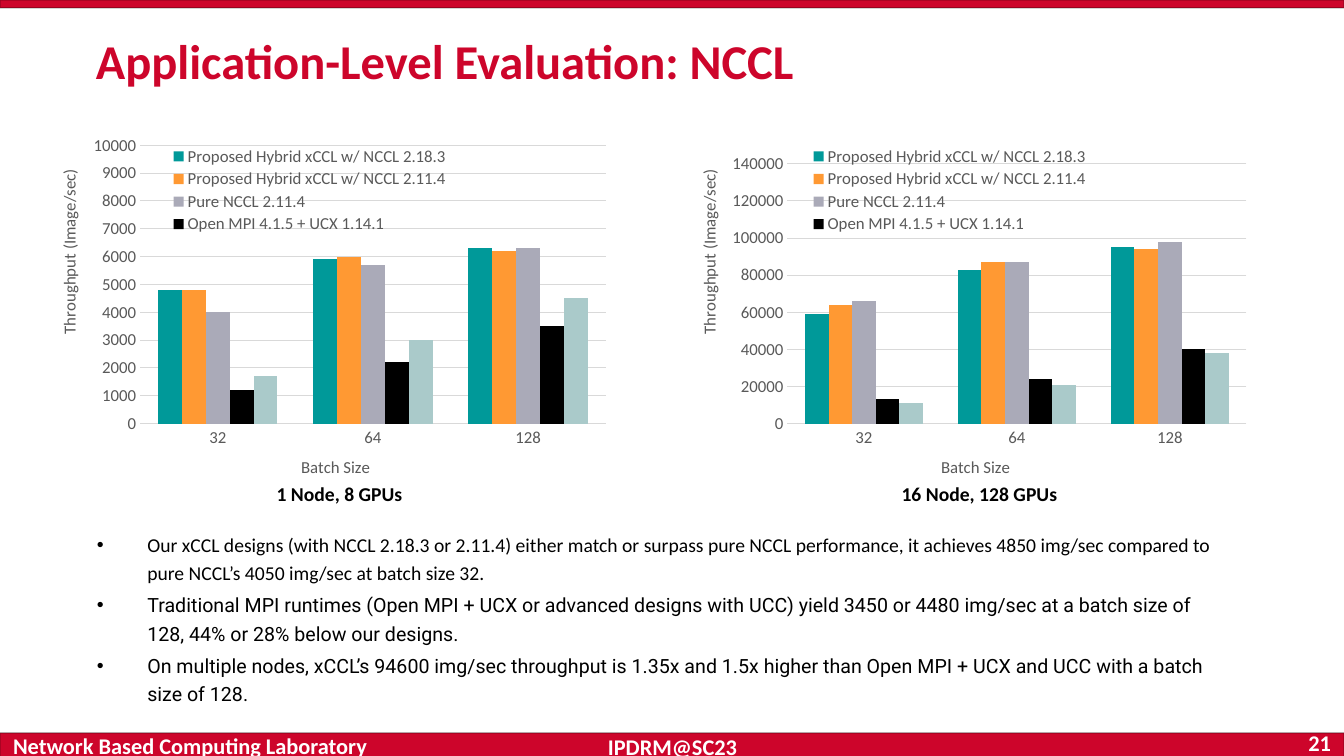
from lxml import etree
from pptx import Presentation
from pptx.chart.data import CategoryChartData
from pptx.dml.color import RGBColor
from pptx.enum.chart import XL_CHART_TYPE as CT, XL_LEGEND_POSITION as LP, XL_TICK_MARK as TICK
from pptx.enum.shapes import MSO_SHAPE
from pptx.enum.text import MSO_ANCHOR as ANCHOR, PP_ALIGN as ALIGN
from pptx.oxml import parse_xml
from pptx.oxml.ns import nsdecls, qn
from pptx.util import Pt

PX = 914400 / 100.8
RED = RGBColor(0xCD, 0x05, 0x2B)
WHITE = RGBColor(0xFF, 0xFF, 0xFF)
BLACK = RGBColor(0, 0, 0)
GRAY = RGBColor(0x59, 0x59, 0x59)
GRID = RGBColor(0xD9, 0xD9, 0xD9)
TEAL = RGBColor(0x00, 0x99, 0x99)
ORANGE = RGBColor(0xFF, 0x99, 0x33)
LILAC = RGBColor(0xAA, 0xAA, 0xB8)
MINT = RGBColor(0xAA, 0xCA, 0xCA)


def px(*lengths):
    return [round(n * PX) for n in lengths]


def add_text(text, box=None, p=None, size=14, color=BLACK, bold=False, font='Calibri',
             align=ALIGN.LEFT, anchor=ANCHOR.TOP, inset=(10, 5), line=None):
    if box:
        tf = s.shapes.add_textbox(*px(*box)).text_frame
        tf.word_wrap = True
        tf.vertical_anchor = anchor
        tf.margin_left = tf.margin_right = px(inset[0])[0]
        tf.margin_top = tf.margin_bottom = px(inset[1])[0]
        p = tf.paragraphs[0]
    p.alignment = align
    if line:
        p.line_spacing = line
    r = p.add_run()
    r.text = text
    r.font.name, r.font.size, r.font.bold = font, Pt(size), bold
    r.font.color.rgb = color
    return p


prs = Presentation()
prs.slide_width, prs.slide_height = px(1344, 756)
s = prs.slides.add_slide(prs.slide_layouts[6])

for top, height in ((733, 25), (0, 8)):
    bar = s.shapes.add_shape(MSO_SHAPE.RECTANGLE, *px(0, top, 1344, height))
    bar.shadow.inherit = False
    bar.fill.solid()
    bar.fill.fore_color.rgb = RED
    bar.line.color.rgb = BLACK
    bar.line.width = Pt(1)
    line_color = bar.line._get_or_add_ln().find('.//' + qn('a:srgbClr'))
    etree.SubElement(line_color, qn('a:alpha'), val='25000')

for text, box, align in (
    ('21', (1256, 731, 88, 23), ALIGN.RIGHT),
    ('Network Based Computing Laboratory', (0, 731, 405, 30), ALIGN.LEFT),
    ('IPDRM@SC23', (506, 737, 333, 19), ALIGN.CENTER),
):
    add_text(text, box, size=16, color=WHITE, bold=True, align=align,
             anchor=ANCHOR.MIDDLE, inset=(13, 7))

add_text('Application-Level Evaluation: NCCL', (86, 26, 1190, 86),
         size=34.7, color=RED, bold=True)

bullets = (
    ('Our xCCL designs (with NCCL 2.18.3 or 2.11.4) either match or surpass pure NCCL performance, '
     'it achieves 4850 img/sec compared to pure NCCL’s 4050 img/sec at batch size 32.', 'Calibri'),
    ('Traditional MPI runtimes (Open MPI + UCX or advanced designs with UCC) yield 3450 or 4480 '
     'img/sec at a batch size of 128, 44% or 28% below our designs.', 'Roboto'),
    ('On multiple nodes, xCCL’s 94600 img/sec throughput is 1.35x and 1.5x higher than '
     'Open MPI + UCX and UCC with a batch size of 128.', 'Roboto'),
)
tf = s.shapes.add_textbox(*px(87, 523, 1156, 163)).text_frame
tf.word_wrap = True
for i, (text, font) in enumerate(bullets):
    p = tf.add_paragraph() if i else tf.paragraphs[0]
    pPr = p._p.get_or_add_pPr()
    pPr.set('marL', '457200')
    pPr.set('indent', '-457200')
    etree.SubElement(pPr, qn('a:buFont'), typeface='Arial')
    etree.SubElement(pPr, qn('a:buChar'), char='•')
    if i:
        p.space_before = Pt(3)
    add_text(text, p=p, font=font, line=1.2)

series_styles = (
    ('Proposed Hybrid xCCL w/ NCCL 2.18.3', TEAL),
    ('Proposed Hybrid xCCL w/ NCCL 2.11.4', ORANGE),
    ('Pure NCCL 2.11.4', LILAC),
    ('Open MPI 4.1.5 + UCX 1.14.1', BLACK),
    ('', MINT),
)
panels = (
    ('1 Node, 8 GPUs', 43, 10000, 1000, (0.164, 0.785),
     ((4800, 5900, 6300), (4800, 6000, 6200), (4000, 5700, 6300),
      (1200, 2200, 3500), (1700, 3000, 4500))),
    ('16 Node, 128 GPUs', 683, 150000, 20000, (0.176, 0.774),
     ((59000, 83000, 95000), (64000, 87000, 94000), (66000, 87000, 98000),
      (13000, 24000, 40000), (11000, 21000, 38000))),
)
for caption, left, top_value, step, (plot_x, plot_w), values in panels:
    data = CategoryChartData()
    data.categories = ['32', '64', '128']
    for (name, _), vals in zip(series_styles, values):
        data.add_series(name, vals)
    chart = s.shapes.add_chart(CT.COLUMN_CLUSTERED, *px(left, 129, 593, 372), data).chart
    chart.has_title = False
    chart.font.name, chart.font.size = 'Calibri', Pt(12)
    chart.font.color.rgb = GRAY
    plot = chart.plots[0]
    plot.gap_width, plot.overlap, plot.vary_by_categories = 150, 0, False
    for series, (_, color) in zip(plot.series, series_styles):
        series.format.fill.solid()
        series.format.fill.fore_color.rgb = color

    cat, val = chart.category_axis, chart.value_axis
    for axis, title in ((cat, 'Batch Size'), (val, 'Throughput (Image/sec)')):
        axis.major_tick_mark = axis.minor_tick_mark = TICK.NONE
        add_text(title, p=axis.axis_title.text_frame.paragraphs[0], size=12, color=GRAY,
                 align=ALIGN.CENTER)
    val.minimum_scale, val.maximum_scale, val.major_unit = 0, top_value, step
    val.format.line.fill.background()
    for line in (cat.format.line, val.major_gridlines.format.line):
        line.color.rgb = GRID
        line.width = Pt(0.75)

    chart.has_legend = True
    legend = chart.legend
    legend.position = LP.BOTTOM
    legend.include_in_layout = False
    legend.font.name, legend.font.size = 'Calibri', Pt(12)
    legend.font.color.rgb = GRAY

    for parent, at, sizes in (
        (chart._chartSpace.chart.plotArea, 0, dict(x=plot_x, y=0.044, w=plot_w, h=0.748)),
        (cat.axis_title._element, 1, dict(x=0.43, y=0.87)),
        (val.axis_title._element, 1, dict(x=0.02, y=0.1)),
        (legend._element, 1, dict(x=0.2, y=0.04, w=0.5, h=0.25)),
    ):
        for old in parent.findall(qn('c:layout')):
            parent.remove(old)
        target = '<c:layoutTarget val="inner"/>' if at == 0 else ''
        modes = ''.join(f'<c:{k}Mode val="edge"/>' for k in 'xy')
        places = ''.join(f'<c:{k} val="{v}"/>' for k, v in sizes.items())
        parent.insert(at, parse_xml(
            f'<c:layout {nsdecls("c")}><c:manualLayout>{target}{modes}{places}'
            '</c:manualLayout></c:layout>'))
    legend._element.insert(1, parse_xml(
        f'<c:legendEntry {nsdecls("c")}><c:idx val="4"/><c:delete val="1"/></c:legendEntry>'))

    add_text(caption, (left + 139, 472, 315, 32), bold=True, align=ALIGN.CENTER, line=1.2)

prs.save("out.pptx")
